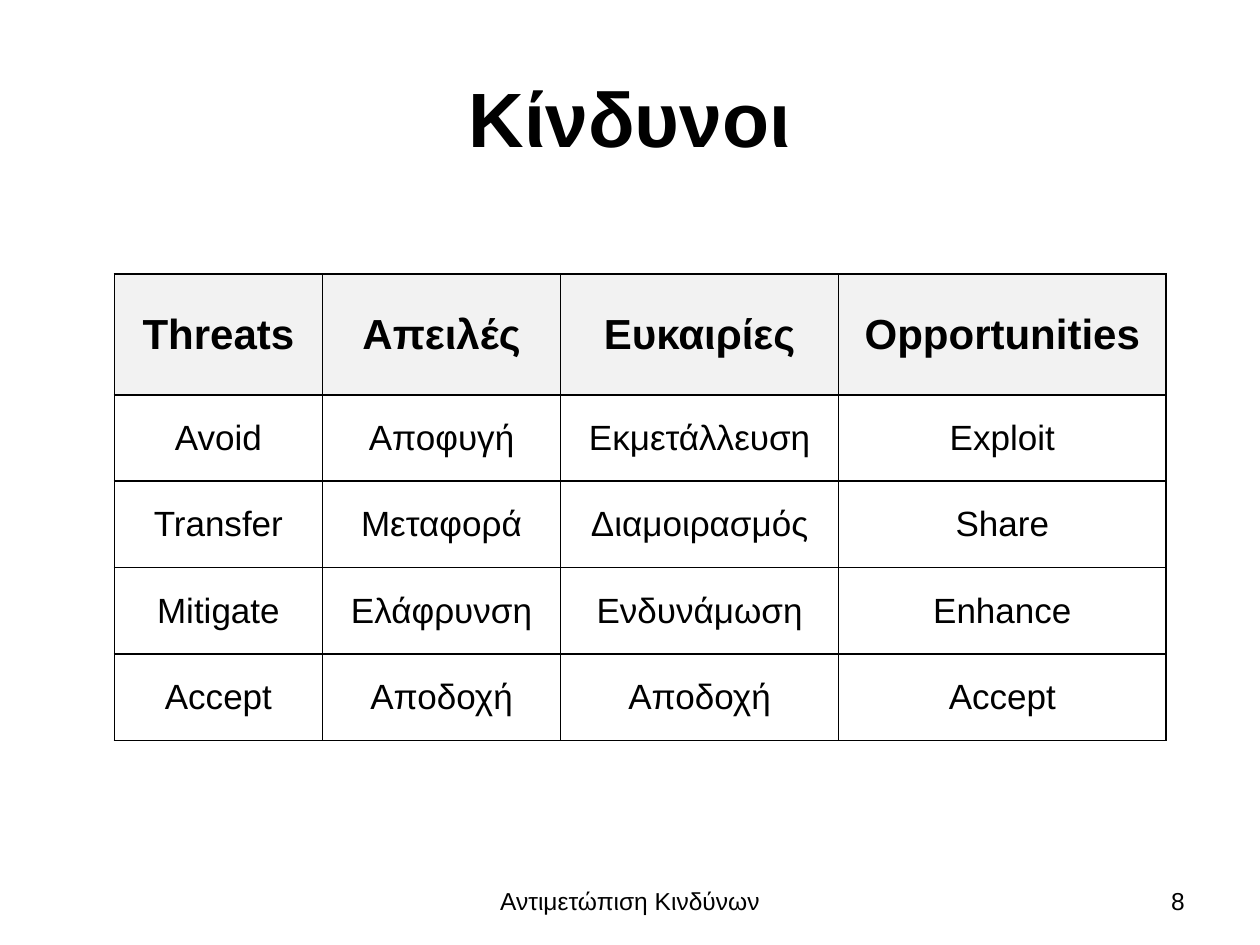
import pptx
import pptx.dml.color
import pptx.enum.text
import pptx.oxml
import pptx.oxml.ns
import pptx.util
from dataclasses import dataclass

Pt = pptx.util.Pt
RGB = pptx.dml.color.RGBColor
Align = pptx.enum.text.PP_ALIGN
Anchor = pptx.enum.text.MSO_ANCHOR


@dataclass(frozen=True)
class Theme:
    font: str = "Arial"
    ink: str = "000000"
    header_fill: str = "F2F2F2"
    title_size: int = 44
    header_size: int = 24
    body_size: int = 20
    footer_size: int = 14
    rule_width: int = 1


theme = Theme()


def write(frame, text, *, size, bold=False, align=Align.CENTER):
    frame.word_wrap = True
    frame.vertical_anchor = Anchor.MIDDLE
    paragraph = frame.paragraphs[0]
    paragraph.alignment = align
    run = paragraph.add_run()
    run.text = text
    run.font.name = theme.font
    run.font.size = Pt(size)
    run.font.bold = bold
    run.font.color.rgb = RGB.from_string(theme.ink)


def outline(cell):
    """Rule all four sides of a table cell; call before setting its fill."""
    properties = cell._tc.get_or_add_tcPr()
    for side in ("lnL", "lnR", "lnT", "lnB"):
        properties.append(pptx.oxml.parse_xml(
            f'<a:{side} {pptx.oxml.ns.nsdecls("a")} w="{Pt(theme.rule_width)}">'
            f'<a:solidFill><a:srgbClr val="{theme.ink}"/></a:solidFill></a:{side}>'))


deck = pptx.Presentation()
deck.slide_width, deck.slide_height = Pt(720), Pt(540)
slide = deck.slides.add_slide(deck.slide_layouts[5])

# Title
title = slide.shapes.title
title.left, title.top, title.width, title.height = Pt(36), Pt(21.6), Pt(648), Pt(90)
write(title.text_frame, "Κίνδυνοι", size=theme.title_size, bold=True)

# Responses to threats and to opportunities
responses = [
    ("Threats", "Απειλές", "Ευκαιρίες", "Opportunities"),
    ("Avoid", "Αποφυγή", "Εκμετάλλευση", "Exploit"),
    ("Transfer", "Μεταφορά", "Διαμοιρασμός", "Share"),
    ("Mitigate", "Ελάφρυνση", "Ενδυνάμωση", "Enhance"),
    ("Accept", "Αποδοχή", "Αποδοχή", "Accept"),
]
column_widths = [119, 136, 159, 187]
row_heights = [69] + [49.4] * 4

grid = slide.shapes.add_table(
    len(row_heights), len(column_widths), Pt(65.3), Pt(156.6),
    Pt(sum(column_widths)), Pt(sum(row_heights))).table
for column, width in zip(grid.columns, column_widths):
    column.width = Pt(width)
for row, height in zip(grid.rows, row_heights):
    row.height = Pt(height)

for row_index, labels in enumerate(responses):
    is_header = row_index == 0
    for column_index, label in enumerate(labels):
        cell = grid.cell(row_index, column_index)
        outline(cell)
        if is_header:
            cell.fill.solid()
            cell.fill.fore_color.rgb = RGB.from_string(theme.header_fill)
        else:
            cell.fill.background()
        cell.vertical_anchor = Anchor.MIDDLE
        write(cell.text_frame, label, bold=is_header,
              size=theme.header_size if is_header else theme.body_size)

# Footer and page number
for text, left, width, align in [
    ("Αντιμετώπιση Κινδύνων", 246, 228, Align.CENTER),
    ("8", 516, 168, Align.RIGHT),
]:
    footer = slide.shapes.add_textbox(Pt(left), Pt(500.5), Pt(width), Pt(28.75))
    write(footer.text_frame, text, size=theme.footer_size, align=align)

deck.save("out.pptx")
